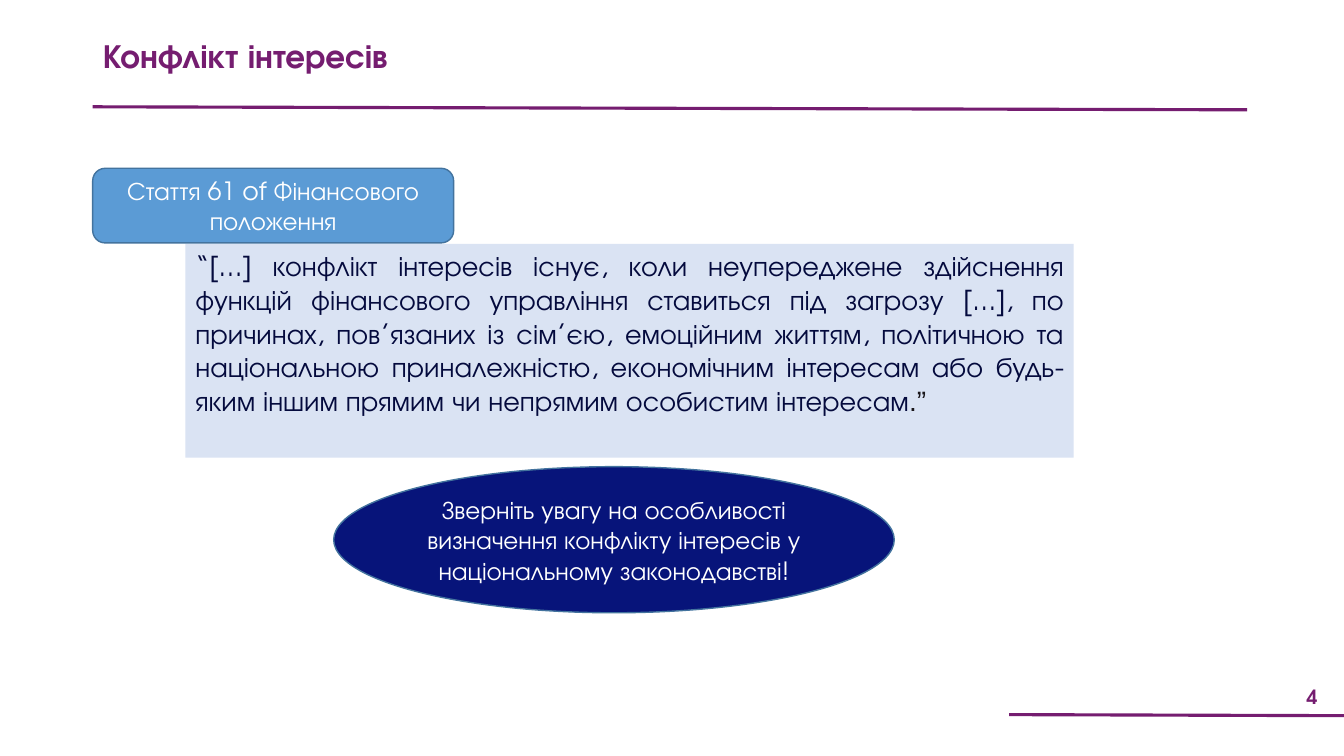
from lxml.etree import SubElement
from pptx import Presentation
from pptx.dml.color import RGBColor as Color
from pptx.enum.shapes import MSO_CONNECTOR as Link, MSO_SHAPE as Kind
from pptx.enum.text import MSO_ANCHOR as Anchor, MSO_AUTO_SIZE as Fit, PP_ALIGN as Align
from pptx.oxml.ns import qn
from pptx.util import Inches, Pt

PLUM = Color(0x75, 0x1D, 0x70)
PALE = Color(0xDA, 0xE3, 0xF3)
BLUE = Color(0x5B, 0x9B, 0xD5)
EDGE = Color(0x43, 0x73, 0x9E)
NAVY = Color(0x07, 0x14, 0x7A)
INK = Color(0x04, 0x0A, 0x3D)
DARK = Color(0x19, 0x16, 0x1A)
WHITE = Color(0xFF, 0xFF, 0xFF)
FACE = "TeX Gyre Adventor"


def add_run(para, text, size=18, color=WHITE, bold=False, face=FACE):
    run = para.add_run()
    run.text = text
    font = run.font
    font.name, font.size, font.bold = face, Pt(size), bold
    font.color.rgb = color


def write(shape, text, align=Align.CENTER, anchor=Anchor.MIDDLE, lead=1.0, **style):
    frame = shape.text_frame
    frame.word_wrap = True
    frame.auto_size = Fit.NONE
    frame.vertical_anchor = anchor
    para = frame.paragraphs[0]
    para.alignment = align
    para.line_spacing = lead
    para.space_before = Pt(0)
    add_run(para, text, **style)
    return para


class Page:
    def __init__(self, deck):
        self.deck = deck
        self.slide = deck.slides.add_slide(deck.slide_layouts[5])
        self.shapes = self.slide.shapes

    def place(self, *shares):
        sides = (self.deck.slide_width, self.deck.slide_height) * 2
        return [round(side * share / 100) for side, share in zip(sides, shares)]

    def title(self, box, text, **style):
        head = self.shapes.title
        head.left, head.top, head.width, head.height = self.place(*box)
        write(head, text, **style)

    def rule(self, *ends):
        line = self.shapes.add_connector(Link.STRAIGHT, *self.place(*ends))
        line.line.color.rgb = PLUM
        line.line.width = Pt(2.25)
        SubElement(line._element.spPr, qn("a:effectLst"))

    def label(self, box, text, **style):
        return write(self.shapes.add_textbox(*self.place(*box)), text, **style)

    def block(self, kind, box, fill, text, edge=None, **style):
        shape = self.shapes.add_shape(kind, *self.place(*box))
        shape.shadow.inherit = False
        shape.fill.solid()
        shape.fill.fore_color.rgb = fill
        if edge is None:
            shape.line.fill.background()
        else:
            shape.line.color.rgb = edge
            shape.line.width = Pt(1)
        return write(shape, text, **style)


def main():
    deck = Presentation()
    deck.slide_width, deck.slide_height = Inches(13.33), Inches(7.5)
    page = Page(deck)

    page.rule(6.9, 14.13, 92.8, 14.53)
    page.label((95.27, 89.73, 4.73, 4.8), "4", size=14, color=PLUM, bold=True)
    page.rule(75.09, 94.53, 100, 94.67)
    page.title((6.9, 4.53, 73, 8.67), "Конфлікт інтересів", align=Align.JUSTIFY,
               anchor=Anchor.TOP, lead=0.9, size=24, color=PLUM, bold=True)

    quote = page.block(
        Kind.RECTANGLE, (13.8, 32.27, 66.09, 28.27), PALE,
        "“[…] конфлікт інтересів існує, коли неупереджене здійснення функцій "
        "фінансового управління ставиться під загрозу […], по причинах, "
        "пов’язаних із сім’єю, емоційним життям, політичною та національною "
        "приналежністю, економічним інтересам або будь-яким іншим прямим "
        "чи непрямим особистим інтересам",
        align=Align.JUSTIFY, anchor=Anchor.TOP, size=20, color=INK)
    add_run(quote, ".”", size=20, color=DARK, face="Arial")

    page.block(Kind.ROUNDED_RECTANGLE, (6.9, 22.27, 26.86, 9.87), BLUE,
               "Стаття 61 of Фінансового положення", edge=EDGE)
    page.block(Kind.OVAL, (24.83, 61.73, 41.71, 19.33), NAVY,
               "Зверніть увагу на особливості визначення конфлікту інтересів "
               "у національному законодавстві!", edge=EDGE)
    deck.save("out.pptx")


if __name__ == "__main__":
    main()
